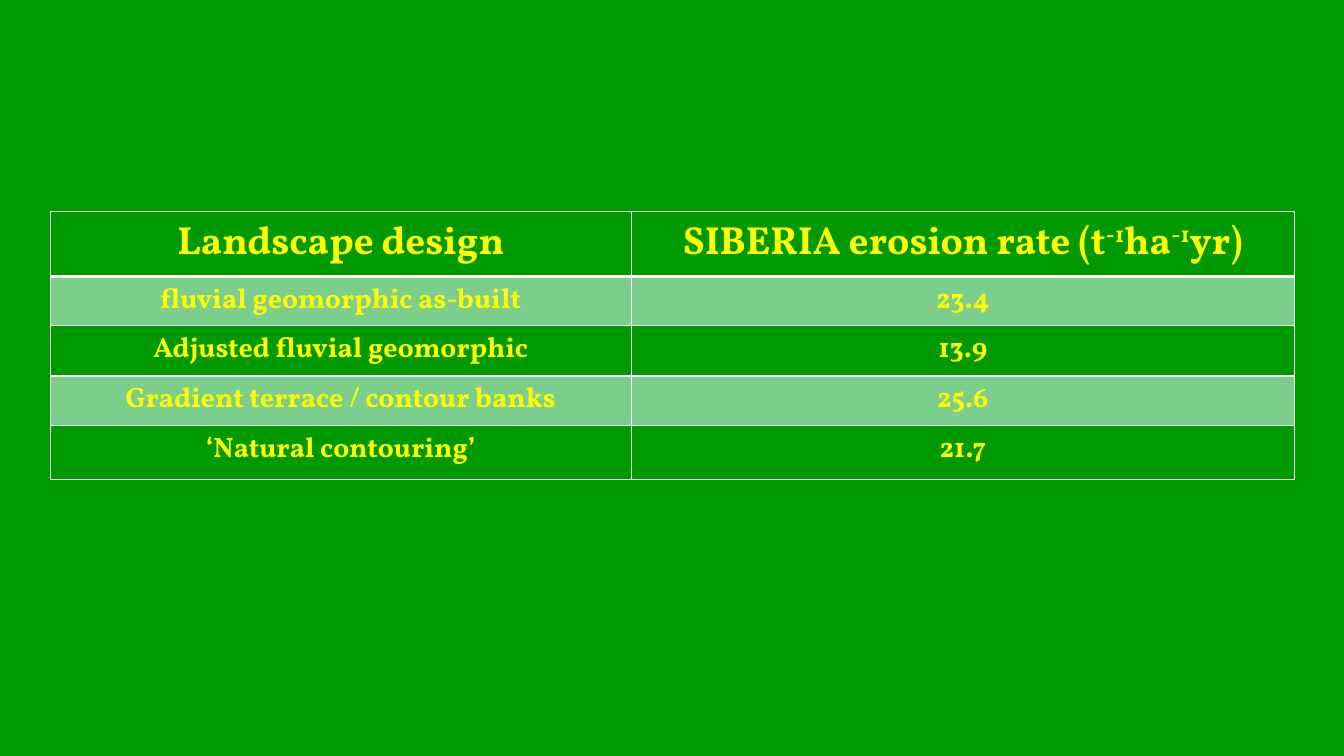
from lxml.etree import SubElement
from pptx import Presentation
from pptx.dml.color import RGBColor
from pptx.enum.text import MSO_ANCHOR, PP_ALIGN
from pptx.oxml.ns import qn
from pptx.util import Inches, Pt

GREEN = RGBColor(0x00, 0x99, 0x00)
PALE_GREEN = RGBColor(0x7C, 0xCE, 0x8C)
YELLOW = RGBColor(0xFF, 0xFF, 0x00)
WHITE = RGBColor(0xFF, 0xFF, 0xFF)

# Each heading is a list of (text, superscript) pieces
HEADINGS = [
    [("Landscape design", False)],
    [("SIBERIA erosion rate (t", False), ("-1", True), ("ha", False),
     ("-1", True), ("yr)", False)],
]
EROSION_RATES = [
    ("fluvial geomorphic as-built", "23.4"),
    ("Adjusted fluvial geomorphic", "13.9"),
    ("Gradient terrace / contour banks", "25.6"),
    ("‘Natural contouring’", "21.7"),
]
COLUMN_WIDTHS = [5.76, 6.58]
ROW_HEIGHTS = [0.62, 0.48, 0.5, 0.44, 0.54]


class SlideBuilder:
    font_name = "Vollkorn"
    heading_size, body_size = Pt(28), Pt(20)
    thin, thick = Pt(1), Pt(3)

    def __init__(self, deck):
        self.slide = deck.slides.add_slide(deck.slide_layouts[6])

    def background(self, color):
        fill = self.slide.background.fill
        fill.solid()
        fill.fore_color.rgb = color

    def text(self, cell, pieces, size):
        paragraph = cell.text_frame.paragraphs[0]
        paragraph.alignment = PP_ALIGN.CENTER
        font_format = {"name": self.font_name, "size": size, "bold": True}
        for words, superscript in pieces:
            run = paragraph.add_run()
            run.text = words
            for attribute, value in font_format.items():
                setattr(run.font, attribute, value)
            run.font.color.rgb = YELLOW
            if superscript:
                run._r.get_or_add_rPr().set("baseline", "30000")

    def borders(self, cell, top, bottom):
        properties = cell._tc.get_or_add_tcPr()
        widths = {"L": self.thin, "R": self.thin, "T": top, "B": bottom}
        for side, width in widths.items():
            line = SubElement(properties, qn(f"a:ln{side}"), w=str(width))
            fill = SubElement(line, qn("a:solidFill"))
            SubElement(fill, qn("a:srgbClr"), val=str(WHITE))

    def table(self, left, top, headings, records):
        rows = headings, *([[(value, False)] for value in record] for record in records)
        table = self.slide.shapes.add_table(
            len(rows), len(headings), Inches(left), Inches(top),
            Inches(sum(COLUMN_WIDTHS)), Inches(sum(ROW_HEIGHTS))).table
        table.horz_banding = False
        for column, width in zip(table.columns, COLUMN_WIDTHS):
            column.width = Inches(width)
        for row, height in zip(table.rows, ROW_HEIGHTS):
            row.height = Inches(height)

        for r, row in enumerate(rows):
            for c, pieces in enumerate(row):
                cell = table.cell(r, c)
                self.text(cell, pieces, self.body_size if r else self.heading_size)
                # The rule under the headings is heavier than the grid
                self.borders(cell, self.thick if r == 1 else self.thin,
                             self.thick if r == 0 else self.thin)
                cell.vertical_anchor = MSO_ANCHOR.TOP
                cell.fill.solid()
                cell.fill.fore_color.rgb = PALE_GREEN if r % 2 else GREEN


def main():
    deck = Presentation()
    deck.slide_width, deck.slide_height = Inches(13.33), Inches(7.5)
    builder = SlideBuilder(deck)

    # Background
    builder.background(GREEN)

    # Erosion rate of each landscape design
    builder.table(0.5, 2.1, HEADINGS, EROSION_RATES)

    deck.save("out.pptx")


if __name__ == "__main__":
    main()
